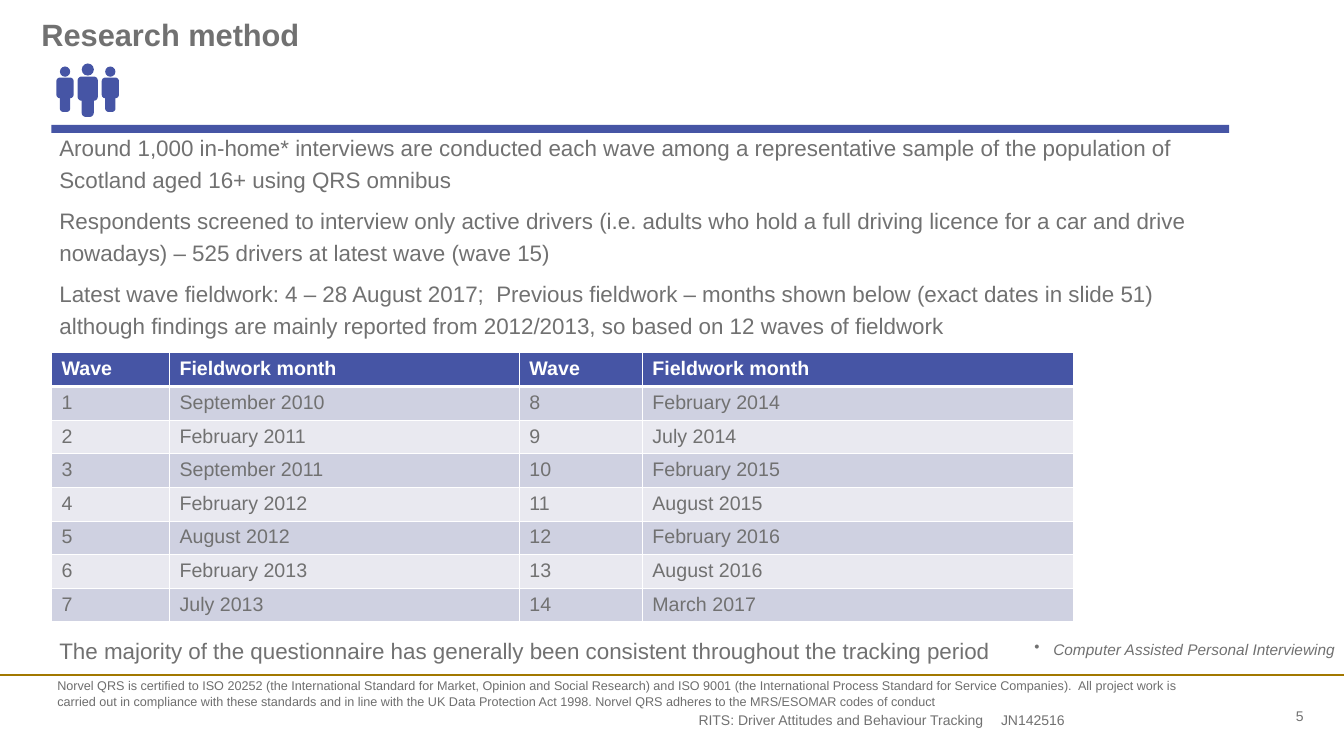
import math
from dataclasses import dataclass

from lxml import etree
from pptx import Presentation
from pptx import util as u
from pptx.dml import color
from pptx.enum import shapes, text
from pptx.oxml import ns

WIDTH, HEIGHT = u.Inches(13.33), u.Inches(7.5)


@dataclass(frozen=True)
class Theme:
    font: str = "Arial"
    grey: str = "717171"
    small_print: str = "6E6E6E"
    blue: str = "4655A5"
    gold: str = "A27800"
    white: str = "FFFFFF"
    bands: tuple = ("CFD1E1", "E9E9F0")
    title: int = 22
    body: int = 16
    table: int = 14
    method: int = 11
    footer: int = 10
    certificate: int = 9


THEME = Theme()

STATEMENTS = [
    "Around 1,000 in-home* interviews are conducted each wave among a representative sample "
    "of the population of Scotland aged 16+ using QRS omnibus",
    "Respondents screened to interview only active drivers (i.e. adults who hold a full driving "
    "licence for a car and drive nowadays) – 525 drivers at latest wave (wave 15)",
    "Latest wave fieldwork: 4 – 28 August 2017;  Previous fieldwork – months shown below "
    "(exact dates in slide 51) although findings are mainly reported from 2012/2013, "
    "so based on 12 waves of fieldwork",
    "The majority of the questionnaire has generally been consistent throughout the tracking period",
]
CERTIFICATE = (
    "Norvel QRS is certified to ISO 20252 (the International Standard for Market, Opinion and "
    "Social Research) and ISO 9001 (the International Process Standard for Service Companies).  "
    "All project work is carried out in compliance with these standards and in line with the "
    "UK Data Protection Act 1998. Norvel QRS adheres to the MRS/ESOMAR codes of conduct"
)
MONTHS = [
    "September 2010", "February 2011", "September 2011", "February 2012", "August 2012",
    "February 2013", "July 2013", "February 2014", "July 2014", "February 2015",
    "August 2015", "February 2016", "August 2016", "March 2017",
]


def across(percent):
    return round(WIDTH * percent / 100)


def down(percent):
    return round(HEIGHT * percent / 100)


def frame(left, top, width, height):
    return across(left), down(top), across(width), down(height)


def rgb(value):
    return color.RGBColor.from_string(value)


def format_runs(paragraph, size, ink, bold=False, italic=False):
    for run in paragraph.runs:
        run.font.name = THEME.font
        run.font.size = u.Pt(size)
        run.font.color.rgb = rgb(ink)
        run.font.bold = bold
        run.font.italic = italic


def add_text(slide, box, lines, size, ink=THEME.grey, inset=True, wrap=True, **style):
    text_frame = slide.shapes.add_textbox(*box).text_frame
    text_frame.word_wrap = wrap
    if not inset:
        text_frame.margin_left = text_frame.margin_right = 0
        text_frame.margin_top = text_frame.margin_bottom = 0
    text_frame.text = "\n".join(lines)
    for paragraph in text_frame.paragraphs:
        format_runs(paragraph, size, ink, **style)
    return text_frame


def add_bullet(paragraph, indent):
    properties = paragraph._p.get_or_add_pPr()
    properties.set("marL", str(indent))
    properties.set("indent", str(-indent))
    etree.SubElement(properties, ns.qn("a:buChar"), char="•")


def paint(shape, fill):
    shape.shadow.inherit = False
    shape.fill.solid()
    shape.fill.fore_color.rgb = rgb(fill)
    shape.line.fill.background()


def add_footer_line(slide, top):
    line = slide.shapes.add_connector(
        shapes.MSO_CONNECTOR.STRAIGHT, 0, down(top), WIDTH, down(top))
    line.line.color.rgb = rgb(THEME.gold)
    line.line.width = u.Pt(1.5)
    etree.SubElement(line._element.spPr, ns.qn("a:effectLst"))


def body_outline(centre, top, unit):
    radius, torso, height = 0.2, 1.2, 2.0
    corners = [
        (0.3, radius, -90), (0.3, torso - radius, 0), (0.1, height - radius, 0),
        (-0.1, height - radius, 90), (-0.3, torso - radius, 90), (-0.3, radius, 180),
    ]
    points = []
    for x, y, start in corners:
        for step in range(7):
            angle = math.radians(start + 15 * step)
            points.append((round(centre + unit * (x + radius * math.cos(angle))),
                           round(top + unit * (y + radius * math.sin(angle)))))
    return points


def add_person(group, centre, top, scale):
    unit = across(1.5) * scale
    centre, top = across(centre), down(top)
    points = body_outline(centre, top + 0.65 * unit, unit)
    builder = group.shapes.build_freeform(*points[0])
    builder.add_line_segments(points[1:], close=True)
    paint(builder.convert_to_shape(), THEME.blue)
    size = round(0.6 * unit)
    head = group.shapes.add_shape(
        shapes.MSO_SHAPE.OVAL, centre - size // 2, top, size, size)
    paint(head, THEME.blue)


def add_borders(cell, widths):
    properties = cell._tc.get_or_add_tcPr()
    for side, width in zip("LRTB", widths):
        border = etree.SubElement(properties, ns.qn(f"a:ln{side}"), w=str(u.Pt(width)))
        fill = etree.SubElement(border, ns.qn("a:solidFill"))
        etree.SubElement(fill, ns.qn("a:srgbClr"), val=THEME.white)


def add_wave_table(slide, box, column_shares):
    half = len(MONTHS) // 2
    rows = [["Wave", "Fieldwork month"] * 2]
    for index in range(half):
        rows.append([str(index + 1), MONTHS[index],
                     str(index + half + 1), MONTHS[index + half]])
    table = slide.shapes.add_table(len(rows), len(column_shares), *box).table
    for column, share in zip(table.columns, column_shares):
        column.width = across(share)
    for number, values in enumerate(rows):
        header = number == 0
        fill = THEME.blue if header else THEME.bands[(number - 1) % 2]
        for cell, value in zip(table.rows[number].cells, values):
            cell.text = value
            format_runs(cell.text_frame.paragraphs[0], THEME.table,
                        THEME.white if header else THEME.grey, bold=header)
            add_borders(cell, (1, 1, 3 if number == 1 else 1, 3 if header else 1))
            cell.fill.solid()
            cell.fill.fore_color.rgb = rgb(fill)


def add_statements(slide, box):
    paragraphs = add_text(slide, box, STATEMENTS, THEME.body).paragraphs
    for paragraph in paragraphs:
        paragraph.line_spacing = 1.2
    for paragraph in paragraphs[1:-1]:
        paragraph.space_before = u.Pt(6)
    paragraphs[-1].space_before = u.Pt(209)


def main():
    presentation = Presentation()
    presentation.slide_width, presentation.slide_height = WIDTH, HEIGHT
    slide = presentation.slides.add_slide(presentation.slide_layouts[6])

    add_footer_line(slide, 89.33)
    add_text(slide, frame(51.24, 93.47, 38.33, 2.93),
             ["RITS: Driver Attitudes and Behaviour Tracking\tJN142516"], THEME.footer)
    add_statements(slide, frame(3.68, 16.4, 87.62, 72.8))
    page = add_text(slide, frame(91.45, 93.6, 5.55, 2.27), ["5"], THEME.footer, inset=False)
    page.vertical_anchor = text.MSO_ANCHOR.BOTTOM
    page.paragraphs[0].alignment = text.PP_ALIGN.RIGHT
    add_text(slide, frame(3.08, 2.13, 93.77, 8.67), ["Research method"], THEME.title,
             inset=False, bold=True)

    rule = slide.shapes.add_shape(
        shapes.MSO_SHAPE.RECTANGLE, *frame(3.83, 16.53, 87.62, 1.07))
    paint(rule, THEME.blue)
    method = add_text(slide, frame(76.22, 84, 24.08, 3.87),
                      ["Computer Assisted Personal Interviewing"], THEME.method,
                      wrap=False, italic=True)
    method.auto_size = text.MSO_AUTO_SIZE.SHAPE_TO_FIT_TEXT
    add_bullet(method.paragraphs[0], across(1.41))

    people = slide.shapes.add_group_shape()
    for centre, top, scale in [(6.53, 8.4, 1), (8.21, 8.8, 0.85), (4.84, 8.8, 0.85)]:
        add_person(people, centre, top, scale)

    add_wave_table(slide, frame(3.83, 46.67, 76.07, 35.6), (8.78, 26.03, 9.15, 32.11))
    add_text(slide, frame(3.53, 89.07, 85.22, 5.33), [CERTIFICATE],
             THEME.certificate, THEME.small_print)
    presentation.save("out.pptx")


if __name__ == "__main__":
    main()
